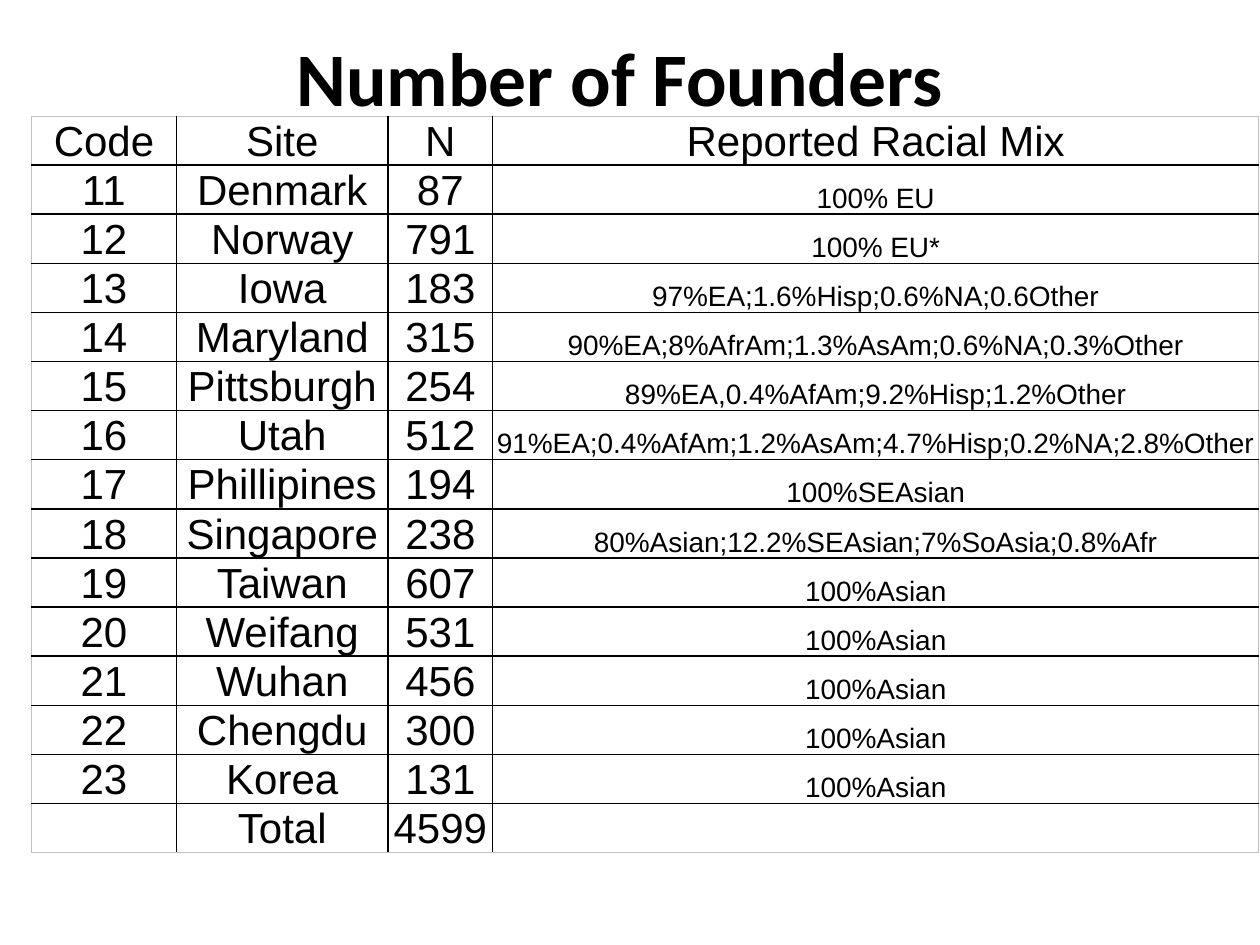
from dataclasses import dataclass

from lxml import etree
from pptx import Presentation
from pptx.dml.color import RGBColor
from pptx.enum.text import MSO_ANCHOR, PP_ALIGN
from pptx.oxml.ns import qn
from pptx.util import Inches, Pt

CENTER = PP_ALIGN.CENTER
MIDDLE = MSO_ANCHOR.MIDDLE
BOTTOM = MSO_ANCHOR.BOTTOM
BLANK_LAYOUT = 6


@dataclass(frozen=True)
class Theme:
    """Colours, fonts and type sizes of the slide."""

    ink: str = "000000"
    frame: str = "C0C0C0"
    title_font: str = "Calibri"
    table_font: str = "Arial"
    title_size: float = 43.2
    table_size: float = 24
    mix_size: float = 16
    grid_width: float = 1
    frame_width: float = 0.5


THEME = Theme()
CELL_FORMAT = {
    "margin_left": Inches(0.01),
    "margin_right": Inches(0.01),
    "margin_top": Inches(0.01),
    "margin_bottom": 0,
    "vertical_anchor": BOTTOM,
}
TITLE_FORMAT = {"word_wrap": True, "vertical_anchor": MIDDLE}
COLUMN_WIDTHS = (1.15, 1.68, 0.83, 6.08)
ROW_HEIGHT = 0.39
MIX_COLUMN = 3
FOUNDERS = (
    ("Code", "Site", "N", "Reported Racial Mix"),
    ("11", "Denmark", "87", "100% EU"),
    ("12", "Norway", "791", "100% EU*"),
    ("13", "Iowa", "183", "97%EA;1.6%Hisp;0.6%NA;0.6Other"),
    ("14", "Maryland", "315", "90%EA;8%AfrAm;1.3%AsAm;0.6%NA;0.3%Other"),
    ("15", "Pittsburgh", "254", "89%EA,0.4%AfAm;9.2%Hisp;1.2%Other"),
    ("16", "Utah", "512", "91%EA;0.4%AfAm;1.2%AsAm;4.7%Hisp;0.2%NA;2.8%Other"),
    ("17", "Phillipines", "194", "100%SEAsian"),
    ("18", "Singapore", "238", "80%Asian;12.2%SEAsian;7%SoAsia;0.8%Afr"),
    ("19", "Taiwan", "607", "100%Asian"),
    ("20", "Weifang", "531", "100%Asian"),
    ("21", "Wuhan", "456", "100%Asian"),
    ("22", "Chengdu", "300", "100%Asian"),
    ("23", "Korea", "131", "100%Asian"),
    ("", "Total", "4599", ""),
)


def apply_format(target, values):
    """Set each named attribute on the target."""
    for name, value in values.items():
        setattr(target, name, value)


def write_text(frame, text, font, size, bold=False):
    """Write one centred paragraph into a text frame."""
    para = frame.paragraphs[0]
    para.alignment = CENTER
    if text:
        span = para.add_run()
        span.text = text
        apply_format(span.font, {"name": font, "size": Pt(size), "bold": bold})
        span.font.color.rgb = RGBColor.from_string(THEME.ink)


def add_title(page, text):
    """Add the slide heading."""
    box = page.shapes.add_textbox(Inches(0.42), Inches(0.17), Inches(9), Inches(0.87))
    apply_format(box.text_frame, TITLE_FORMAT)
    write_text(box.text_frame, text, THEME.title_font, THEME.title_size, bold=True)


def add_borders(cell, outer_sides):
    """Draw four cell borders, lighter on the sides that frame the table."""
    properties = cell._tc.get_or_add_tcPr()
    for position, side in enumerate("LRTB"):
        is_outer = side in outer_sides
        width = THEME.frame_width if is_outer else THEME.grid_width
        line = etree.Element(qn(f"a:ln{side}"), w=str(Pt(width)))
        fill = etree.SubElement(line, qn("a:solidFill"))
        color = THEME.frame if is_outer else THEME.ink
        etree.SubElement(fill, qn("a:srgbClr"), val=color)
        properties.insert(position, line)


def find_outer_sides(row, column):
    """Name the sides of a cell that lie on the table's edge."""
    edges = {
        "L": column == 0,
        "R": column == len(COLUMN_WIDTHS) - 1,
        "T": row == 0,
        "B": row == len(FOUNDERS) - 1,
    }
    return [side for side, on_edge in edges.items() if on_edge]


def add_founder_table(page):
    """Add the table of sites, counts and reported mixes."""
    height = ROW_HEIGHT * len(FOUNDERS)
    table = page.shapes.add_table(
        len(FOUNDERS), len(COLUMN_WIDTHS),
        Inches(0.25), Inches(0.92), Inches(sum(COLUMN_WIDTHS)), Inches(height),
    ).table
    apply_format(table, {"first_row": False, "horz_banding": False})
    for column, width in zip(table.columns, COLUMN_WIDTHS):
        column.width = Inches(width)
    for row, values in enumerate(FOUNDERS):
        table.rows[row].height = Inches(ROW_HEIGHT)
        for column, text in enumerate(values):
            cell = table.cell(row, column)
            apply_format(cell, CELL_FORMAT)
            cell.fill.background()
            is_mix = row > 0 and column == MIX_COLUMN
            size = THEME.mix_size if is_mix else THEME.table_size
            write_text(cell.text_frame, text, THEME.table_font, size)
            add_borders(cell, find_outer_sides(row, column))


def main():
    """Build and save the slide."""
    deck = Presentation()
    apply_format(deck, {"slide_width": Inches(10), "slide_height": Inches(7.5)})
    page = deck.slides.add_slide(deck.slide_layouts[BLANK_LAYOUT])
    add_founder_table(page)
    add_title(page, "Number of Founders")
    deck.save("out.pptx")


if __name__ == "__main__":
    main()
